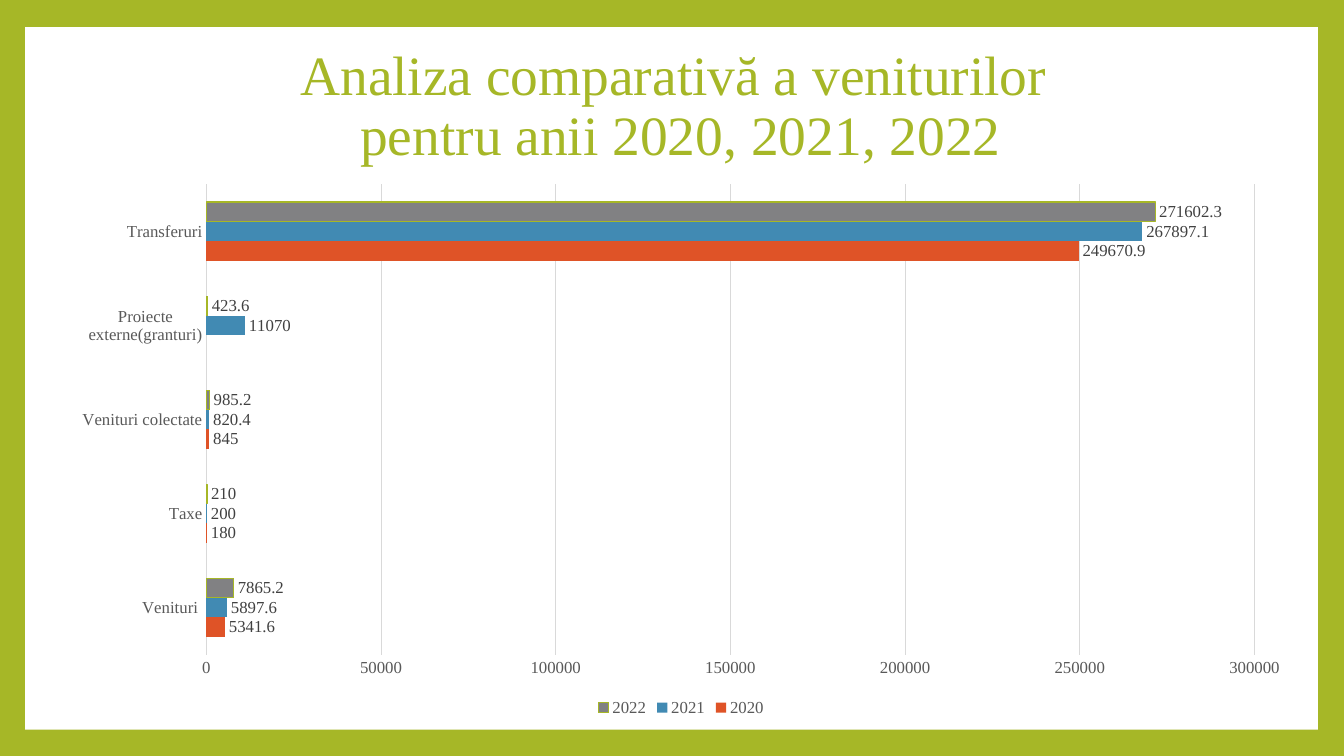
from pptx import Presentation
from pptx.chart.data import CategoryChartData
from pptx.dml.color import RGBColor
from pptx.enum.chart import XL_CHART_TYPE, XL_LABEL_POSITION, XL_LEGEND_POSITION, XL_TICK_MARK
from pptx.enum.shapes import MSO_SHAPE
from pptx.enum.text import MSO_ANCHOR, PP_ALIGN
from pptx.util import Inches, Pt

COLORS = {
    "green": "A6B727",
    "white": "FFFFFF",
    "orange": "DF5327",
    "blue": "418AB3",
    "gray": "818183",
    "grid": "D9D9D9",
    "axis_text": "595959",
    "label_text": "404040",
    "black": "000000",
}
CATEGORIES = ["Venituri ", "Taxe", "Venituri colectate", "Proiecte externe(granturi)", "Transferuri"]
INCOME = {
    "2020": ("orange", [5341.6, 180, 845, None, 249670.9]),
    "2021": ("blue", [5897.6, 200, 820.4, 11070, 267897.1]),
    "2022": ("gray", [7865.2, 210, 985.2, 423.6, 271602.3]),
}


def color(name):
    return RGBColor.from_string(COLORS[name])


def format_font(font, size, tone):
    font.name = "Times New Roman"
    font.size = Pt(size)
    font.bold = False
    font.color.rgb = color(tone)


def format_line(line, tone):
    line.color.rgb = color(tone)
    line.width = Pt(0.75)


def write(frame, text, size=12, tone="black", align=PP_ALIGN.LEFT, spacing=1.0):
    frame.text = text
    paragraph = frame.paragraphs[0]
    paragraph.alignment = align
    paragraph.line_spacing = spacing
    paragraph.space_before = Pt(0)
    for run in paragraph.runs:
        format_font(run.font, size, tone)


class IncomeSlide:
    def __init__(self, presentation):
        self.slide = presentation.slides.add_slide(presentation.slide_layouts[5])
        background = self.slide.background.fill
        background.solid()
        background.fore_color.rgb = color("green")

    def panel(self, left, top, width, height):
        panel = self.slide.shapes.add_shape(
            MSO_SHAPE.RECTANGLE, Inches(left), Inches(top), Inches(width), Inches(height))
        panel.shadow.inherit = False
        panel.fill.solid()
        panel.fill.fore_color.rgb = color("white")
        panel.line.fill.background()
        self.slide.shapes._spTree.insert(2, panel._element)

    def title(self, text, left, top, width, height):
        title = self.slide.shapes.title
        title.left, title.top = Inches(left), Inches(top)
        title.width, title.height = Inches(width), Inches(height)
        frame = title.text_frame
        frame.word_wrap = True
        frame.vertical_anchor = MSO_ANCHOR.MIDDLE
        frame.margin_bottom = Inches(0.64)
        write(frame, text, size=39.6, tone="green", align=PP_ALIGN.CENTER, spacing=0.9)

    def bar_chart(self, categories, income, left, top, width, height):
        data = CategoryChartData(number_format="General")
        data.categories = categories
        for year, (_, amounts) in income.items():
            data.add_series(year, amounts)
        chart = self.slide.shapes.add_chart(
            XL_CHART_TYPE.BAR_CLUSTERED, Inches(left), Inches(top),
            Inches(width), Inches(height), data).chart
        chart.has_title = False
        format_font(chart.font, 10, "black")
        self.legend(chart)
        self.axes(chart)
        plot = chart.plots[0]
        plot.gap_width = 182
        plot.vary_by_categories = False
        for series, (tone, _) in zip(plot.series, income.values()):
            self.bars(series, tone)
        format_line(plot.series[-1].format.line, "green")

    def legend(self, chart):
        chart.has_legend = True
        chart.legend.position = XL_LEGEND_POSITION.BOTTOM
        chart.legend.include_in_layout = False
        format_font(chart.legend.font, 12, "axis_text")

    def axes(self, chart):
        for axis in (chart.category_axis, chart.value_axis):
            axis.major_tick_mark = XL_TICK_MARK.NONE
            axis.minor_tick_mark = XL_TICK_MARK.NONE
            format_font(axis.tick_labels.font, 12, "axis_text")
        format_line(chart.category_axis.format.line, "grid")
        chart.value_axis.format.line.fill.background()
        chart.value_axis.has_major_gridlines = True
        format_line(chart.value_axis.major_gridlines.format.line, "grid")

    def bars(self, series, tone):
        series.invert_if_negative = False
        series.format.fill.solid()
        series.format.fill.fore_color.rgb = color(tone)
        labels = series.data_labels
        labels.show_value = True
        labels.position = XL_LABEL_POSITION.OUTSIDE_END
        format_font(labels.font, 12, "label_text")


def main():
    presentation = Presentation()
    presentation.slide_width = Inches(13.33)
    presentation.slide_height = Inches(7.5)
    page = IncomeSlide(presentation)
    page.panel(0.25, 0.27, 12.82, 6.97)
    page.title("Analiza comparativă a veniturilor \vpentru anii 2020, 2021, 2022", 1.5, 0.75, 10.5, 1.22)
    page.bar_chart(CATEGORIES, INCOME, 0.57, 1.72, 12.37, 5.43)
    presentation.save("out.pptx")


if __name__ == "__main__":
    main()
